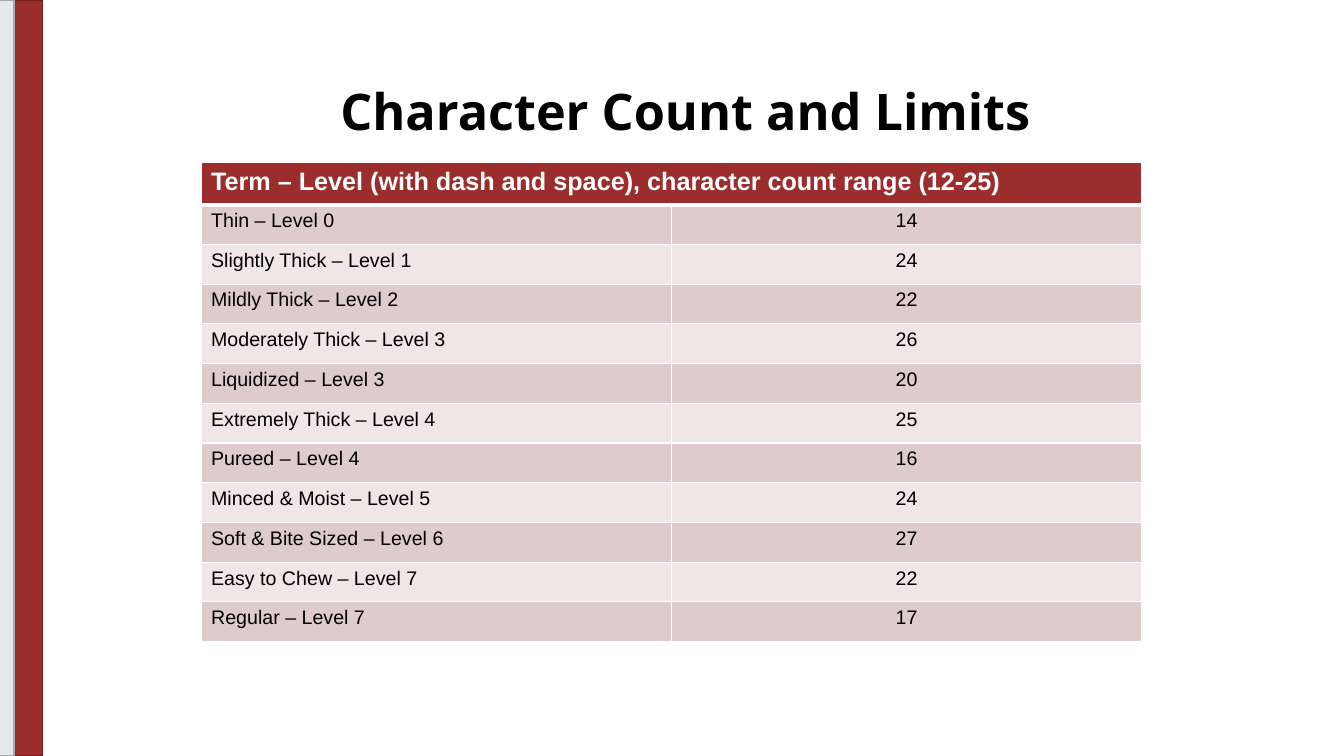
from typing import NamedTuple

from pptx import Presentation
from pptx.dml.color import RGBColor
from pptx.enum.shapes import MSO_SHAPE
from pptx.enum.text import MSO_ANCHOR, PP_ALIGN
from pptx.oxml.ns import qn
from pptx.util import Pt
from lxml import etree

RECTANGLE = MSO_SHAPE.RECTANGLE
MIDDLE = MSO_ANCHOR.MIDDLE
LEFT, CENTER = PP_ALIGN.LEFT, PP_ALIGN.CENTER

BLACK = RGBColor(0x00, 0x00, 0x00)
WHITE = RGBColor(0xFF, 0xFF, 0xFF)
RED = RGBColor(0x9B, 0x2D, 0x2D)
DARK_RED = RGBColor(0x71, 0x20, 0x20)
PALE_GRAY = RGBColor(0xE5, 0xE9, 0xEC)
GRAY = RGBColor(0xA7, 0xAA, 0xAC)
ROW_BANDS = (RGBColor(0xDE, 0xCC, 0xCC), RGBColor(0xEF, 0xE7, 0xE7))

SLIDE_WIDTH, SLIDE_HEIGHT = 960, 540
HEADER_HEIGHT, ROW_HEIGHT = 30, 28.4
COLUMN_WIDTH = 336
THIN, THICK = 1, 3


class Stripe(NamedTuple):
    left: float
    width: float
    fill: RGBColor
    line: RGBColor


class Term(NamedTuple):
    label: str
    count: int


class TextStyle(NamedTuple):
    font: str
    size: float
    color: RGBColor
    bold: bool
    align: PP_ALIGN = LEFT


STRIPES = (
    Stripe(0, 30.4, RED, DARK_RED),
    Stripe(-2, 12, PALE_GRAY, GRAY),
)
HEADING = "Term – Level (with dash and space), character count range (12-25)"
TERMS = (
    Term("Thin – Level 0", 14),
    Term("Slightly Thick – Level 1", 24),
    Term("Mildly Thick – Level 2", 22),
    Term("Moderately Thick – Level 3", 26),
    Term("Liquidized – Level 3", 20),
    Term("Extremely Thick – Level 4", 25),
    Term("Pureed – Level 4", 16),
    Term("Minced & Moist – Level 5", 24),
    Term("Soft & Bite Sized – Level 6", 27),
    Term("Easy to Chew – Level 7", 22),
    Term("Regular – Level 7", 17),
)
TITLE_STYLE = TextStyle("Open Sans", 36, BLACK, True, CENTER)
HEADING_STYLE = TextStyle("Arial", 18, WHITE, True)
LABEL_STYLE = TextStyle("Arial", 14, BLACK, False)
COUNT_STYLE = LABEL_STYLE._replace(align=CENTER)


def write(frame, text: str, style: TextStyle) -> None:
    paragraph = frame.paragraphs[0]
    paragraph.alignment = style.align
    run = paragraph.add_run()
    run.text = text
    run.font.name = style.font
    run.font.size = Pt(style.size)
    run.font.bold = style.bold
    run.font.color.rgb = style.color


def draw_stripe(slide, stripe: Stripe) -> None:
    bar = slide.shapes.add_shape(
        RECTANGLE, Pt(stripe.left), Pt(0), Pt(stripe.width), Pt(SLIDE_HEIGHT))
    bar.shadow.inherit = False
    bar.fill.solid()
    bar.fill.fore_color.rgb = stripe.fill
    bar.line.color.rgb = stripe.line
    bar.line.width = Pt(1)


def draw_title(slide) -> None:
    title = slide.shapes.add_textbox(Pt(50.4), Pt(29.5), Pt(878.4), Pt(104.4))
    frame = title.text_frame
    frame.word_wrap = True
    frame.vertical_anchor = MIDDLE
    write(frame, "Character Count and Limits", TITLE_STYLE)
    frame.paragraphs[0].line_spacing = 0.9


def paint_cell(cell, fill: RGBColor, top: float, bottom: float) -> None:
    properties = cell._tc.get_or_add_tcPr()
    edges = {"a:lnL": THIN, "a:lnR": THIN, "a:lnT": top, "a:lnB": bottom}
    for tag, width in edges.items():
        edge = etree.SubElement(properties, qn(tag), w=str(Pt(width)))
        solid = etree.SubElement(edge, qn("a:solidFill"))
        etree.SubElement(solid, qn("a:srgbClr"), val=str(WHITE))
    cell.fill.solid()
    cell.fill.fore_color.rgb = fill


def draw_table(slide) -> None:
    height = HEADER_HEIGHT + ROW_HEIGHT * len(TERMS)
    table = slide.shapes.add_table(
        len(TERMS) + 1, 2, Pt(143.6), Pt(116.2),
        Pt(2 * COLUMN_WIDTH), Pt(height)).table
    for column in table.columns:
        column.width = Pt(COLUMN_WIDTH)
    for row in table.rows:
        row.height = Pt(ROW_HEIGHT)
    table.rows[0].height = Pt(HEADER_HEIGHT)

    # Heading across both columns
    table.cell(0, 0).merge(table.cell(0, 1))
    for cell in table.rows[0].cells:
        paint_cell(cell, RED, THIN, THICK)
    write(table.cell(0, 0).text_frame, HEADING, HEADING_STYLE)

    # Banded rows of terms
    for index, term in enumerate(TERMS):
        label, count = table.rows[index + 1].cells
        for cell in (label, count):
            paint_cell(cell, ROW_BANDS[index % 2], THIN if index else THICK, THIN)
        write(label.text_frame, term.label, LABEL_STYLE)
        write(count.text_frame, str(term.count), COUNT_STYLE)


def main() -> None:
    deck = Presentation()
    deck.slide_width, deck.slide_height = Pt(SLIDE_WIDTH), Pt(SLIDE_HEIGHT)
    slide = deck.slides.add_slide(deck.slide_layouts[6])
    for stripe in STRIPES:
        draw_stripe(slide, stripe)
    draw_title(slide)
    draw_table(slide)
    deck.save("out.pptx")


if __name__ == "__main__":
    main()
